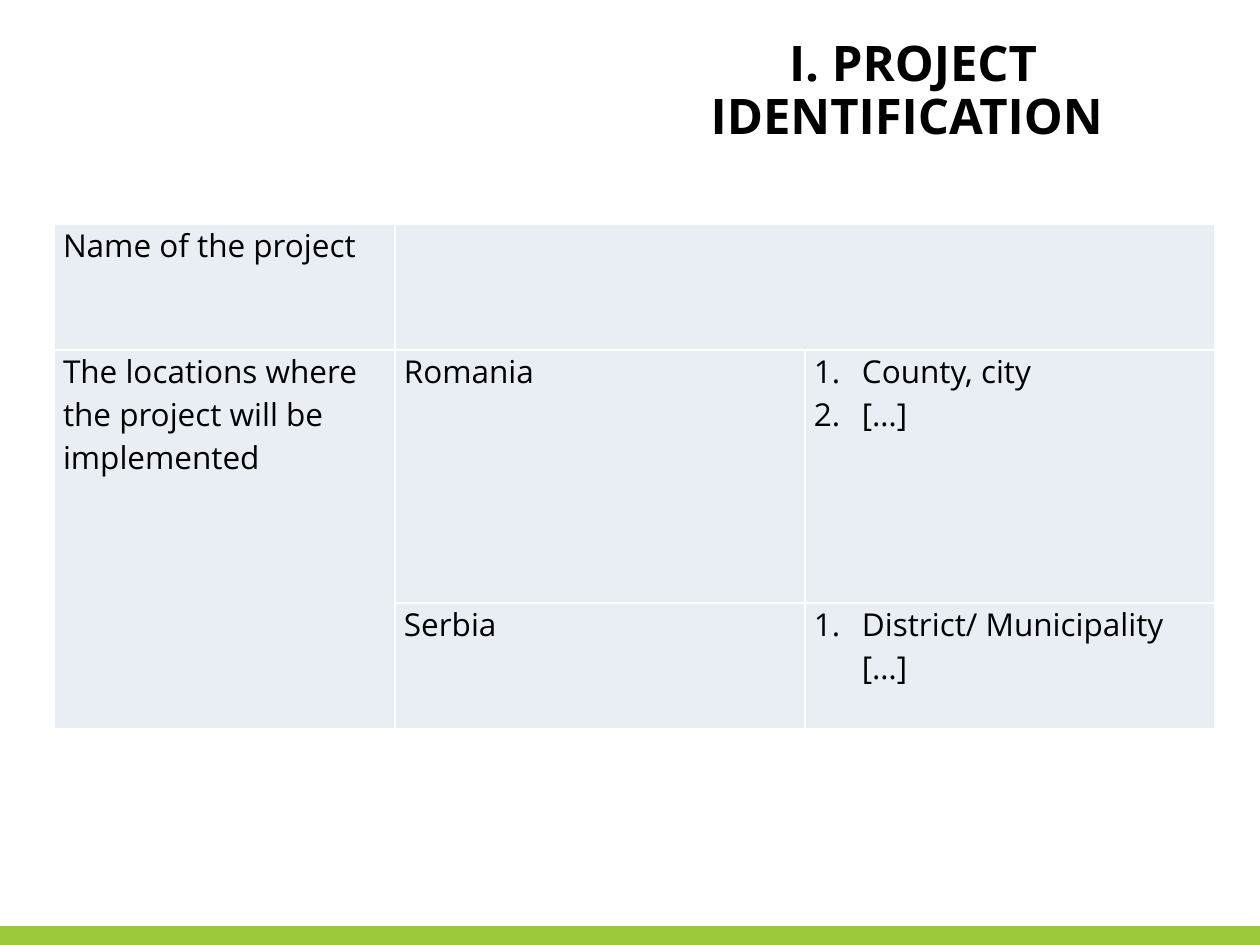
from lxml.etree import SubElement
from pptx import Presentation
from pptx.dml.color import RGBColor
from pptx.enum.shapes import MSO_SHAPE
from pptx.enum.text import MSO_ANCHOR, PP_ALIGN
from pptx.oxml.ns import qn
from pptx.util import Pt

PX = 914400 // 126
BLACK = RGBColor(0x00, 0x00, 0x00)
WHITE = RGBColor(0xFF, 0xFF, 0xFF)
GREEN = RGBColor(0x9A, 0xCA, 0x3C)
PALE_BLUE = RGBColor(0xE9, 0xED, 0xF4)

TITLE_FONT = {"name": "Open Sans", "size": Pt(28), "bold": True}
CELL_FONT = {"name": "Open Sans", "size": Pt(18), "bold": False}
CELL_MARGINS = {"margin_left": 9 * PX, "margin_right": 9 * PX,
                "margin_top": 0, "margin_bottom": 0}
COLUMN_WIDTHS = [341, 410, 410]
ROW_HEIGHTS = [126, 253, 126]
NUMBER_INDENT = 48
NUMBERED_COLUMN = 2
CELL_TEXTS = {
    (0, 0): ["Name of the project"],
    (1, 0): ["The locations where the project will be implemented"],
    (1, 1): ["Romania"],
    (1, 2): ["County, city", "[…]"],
    (2, 1): ["Serbia"],
    (2, 2): ["District/ Municipality […]"],
}


def set_all(target, values):
    for name, value in values.items():
        setattr(target, name, value)


def add_span(para, text, font):
    span = para.add_run()
    span.text = text
    set_all(span.font, font)
    span.font.color.rgb = BLACK


def add_bar(page, left, top, width, height):
    bar = page.shapes.add_shape(
        MSO_SHAPE.RECTANGLE, left * PX, top * PX, width * PX, height * PX)
    bar.shadow.inherit = False
    bar.fill.solid()
    bar.fill.fore_color.rgb = GREEN
    bar.line.fill.background()


def add_title(page, text, left, top, width, height):
    box = page.shapes.add_textbox(left * PX, top * PX, width * PX, height * PX)
    frame = box.text_frame
    set_all(frame, {"word_wrap": True, "vertical_anchor": MSO_ANCHOR.MIDDLE})
    para = frame.paragraphs[0]
    set_all(para, {"alignment": PP_ALIGN.CENTER, "line_spacing": 0.9})
    add_span(para, text, TITLE_FONT)


def number_paragraph(para):
    properties = para._p.get_or_add_pPr()
    properties.set("marL", str(NUMBER_INDENT * PX))
    properties.set("indent", str(-NUMBER_INDENT * PX))
    SubElement(properties, qn("a:buFont"), typeface="+mj-lt")
    SubElement(properties, qn("a:buAutoNum"), type="arabicPeriod")


def style_cell(cell):
    set_all(cell, CELL_MARGINS)
    properties = cell._tc.get_or_add_tcPr()
    for side in ("lnL", "lnR", "lnT", "lnB"):
        border = SubElement(properties, qn(f"a:{side}"), w=str(Pt(1)))
        paint = SubElement(border, qn("a:solidFill"))
        SubElement(paint, qn("a:srgbClr"), val=str(WHITE))
    cell.fill.solid()
    cell.fill.fore_color.rgb = PALE_BLUE


def fill_cell(cell, texts, numbered):
    frame = cell.text_frame
    for index, text in enumerate(texts):
        para = frame.add_paragraph() if index else frame.paragraphs[0]
        if numbered:
            number_paragraph(para)
        add_span(para, text, CELL_FONT)


def add_project_table(page, left, top):
    table = page.shapes.add_table(
        len(ROW_HEIGHTS), len(COLUMN_WIDTHS), left * PX, top * PX,
        sum(COLUMN_WIDTHS) * PX, sum(ROW_HEIGHTS) * PX).table
    set_all(table, {"first_row": False, "horz_banding": False})
    for column, width in zip(table.columns, COLUMN_WIDTHS):
        column.width = width * PX
    for row, height in zip(table.rows, ROW_HEIGHTS):
        row.height = height * PX
    for cell in table.iter_cells():
        style_cell(cell)
    table.cell(0, 1).merge(table.cell(0, 2))
    table.cell(1, 0).merge(table.cell(2, 0))
    for (row, column), texts in CELL_TEXTS.items():
        fill_cell(table.cell(row, column), texts, column == NUMBERED_COLUMN)


def main():
    deck = Presentation()
    set_all(deck, {"slide_width": 1260 * PX, "slide_height": 945 * PX})
    page = deck.slides.add_slide(deck.slide_layouts[6])
    add_bar(page, 0, 926, 1260, 19)
    add_title(page, "I. PROJECT IDENTIFICATION ", 620, 27, 586, 131)
    add_project_table(page, 54, 224)
    deck.save("out.pptx")


if __name__ == "__main__":
    main()
